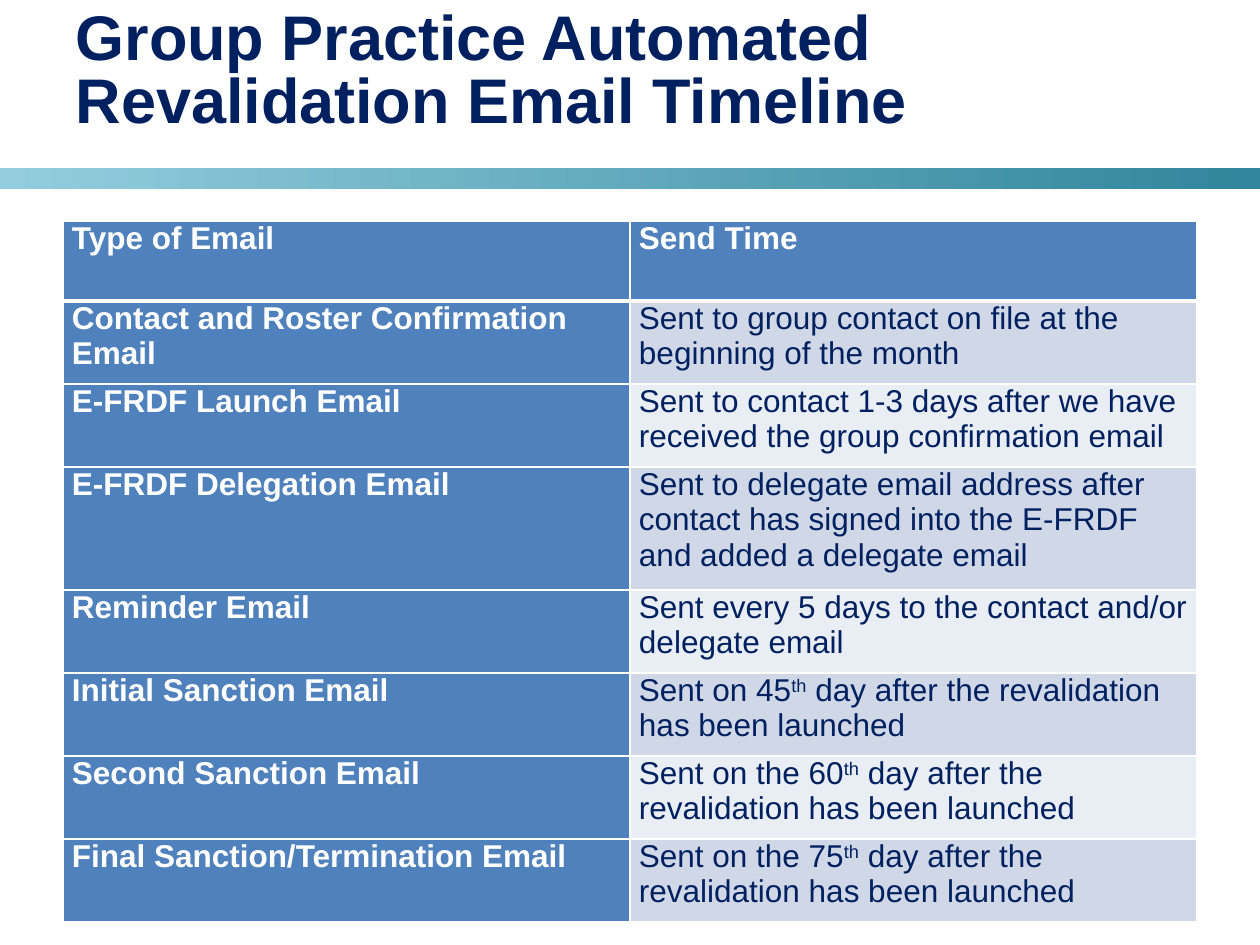
from lxml.etree import SubElement
from pptx import Presentation
from pptx.dml.color import RGBColor
from pptx.enum.shapes import MSO_SHAPE
from pptx.enum.text import MSO_ANCHOR, PP_ALIGN
from pptx.oxml.ns import qn
from pptx.util import Pt

PX = 914400 / 126  # EMU per pixel


def emu(*sizes):
    return [round(size * PX) for size in sizes]


def add_run(para, text, size, color, bold):
    run = para.add_run()
    run.text = text
    font = run.font
    font.name, font.size, font.bold = "Arial", Pt(size), bold
    font.color.rgb = RGBColor.from_string(color)
    return run


NAVY, WHITE, BLUE = "002060", "FFFFFF", "4F81BD"
BANDS = ["D0D8E8", "E9EDF4"]

prs = Presentation()
prs.slide_width, prs.slide_height = emu(1260, 945)
slide = prs.slides.add_slide(prs.slide_layouts[5])

# Gradient bar under the title
bar = slide.shapes.add_shape(MSO_SHAPE.RECTANGLE, *emu(0, 168, 1260, 21))
bar.shadow.inherit = False
bar.line.fill.background()
bar.fill.gradient()
bar.fill.gradient_angle = 180
for stop, color in zip(bar.fill.gradient_stops, ["31859C", "93CDDD"]):
    stop.color.rgb = RGBColor.from_string(color)

# Title
title = slide.shapes.title
title.left, title.top, title.width, title.height = emu(63, 24, 903, 98)
frame = title.text_frame
frame.word_wrap = True
frame.vertical_anchor = MSO_ANCHOR.MIDDLE
para = frame.paragraphs[0]
para.alignment = PP_ALIGN.LEFT
para.line_spacing = Pt(36)
add_run(para, "Group Practice Automated Revalidation Email Timeline", 36, NAVY, True)

# Table text: email type, then the runs of its send time
LAUNCH = " day after the revalidation has been launched"
rows = [
    ("Type of Email", ["Send Time"]),
    ("Contact and Roster Confirmation Email",
     ["Sent to group contact on file at the beginning of the month"]),
    ("E-FRDF Launch Email",
     ["Sent to contact 1-3 days after we have received the group confirmation email"]),
    ("E-FRDF Delegation Email",
     ["Sent to delegate email address after contact has signed into the E-FRDF "
      "and added a delegate email"]),
    ("Reminder Email", ["Sent every 5 days to the contact and/or delegate email"]),
    ("Initial Sanction Email", ["Sent on 45", "th", LAUNCH]),
    ("Second Sanction Email", ["Sent on the 60", "th", LAUNCH]),
    ("Final Sanction/Termination Email", ["Sent on the 75", "th", LAUNCH]),
]
highs = [80, 83, 83, 123, 83, 83, 83, 83]

# Table
shape = slide.shapes.add_table(len(rows), 2, *emu(63, 221, 1134, sum(highs)))
table = shape.table
for r, (kind, time) in enumerate(rows):
    table.rows[r].height = emu(highs[r])[0]
    for c, parts in enumerate([[kind], time]):
        cell = table.cell(r, c)
        cell.margin_left, cell.margin_right = emu(9, 9)
        cell.margin_top = cell.margin_bottom = 0

        # White borders, thicker around the header's lower edge
        for side in "LRTB":
            thick = (r, side) in [(0, "B"), (1, "T")]
            line = SubElement(cell._tc.get_or_add_tcPr(), qn("a:ln" + side),
                              w=str(Pt(3 if thick else 1)))
            fill = SubElement(line, qn("a:solidFill"))
            SubElement(fill, qn("a:srgbClr"), val=WHITE)

        # Fill and text
        head = r == 0 or c == 0
        cell.fill.solid()
        cell.fill.fore_color.rgb = RGBColor.from_string(BLUE if head else BANDS[(r - 1) % 2])
        para = cell.text_frame.paragraphs[0]
        for text in parts:
            run = add_run(para, text, 18, WHITE if head else NAVY, head)
            if text == "th":
                run.font._element.set("baseline", "30000")

prs.save("out.pptx")
